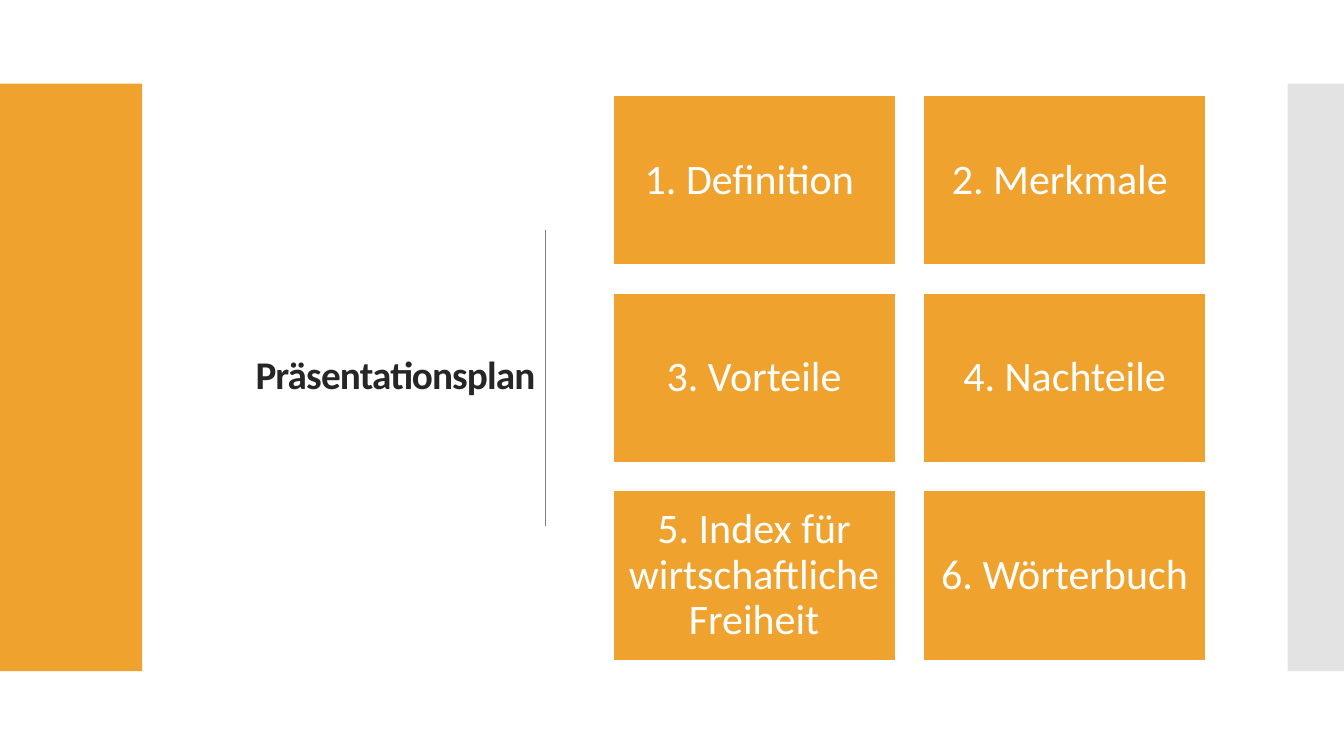
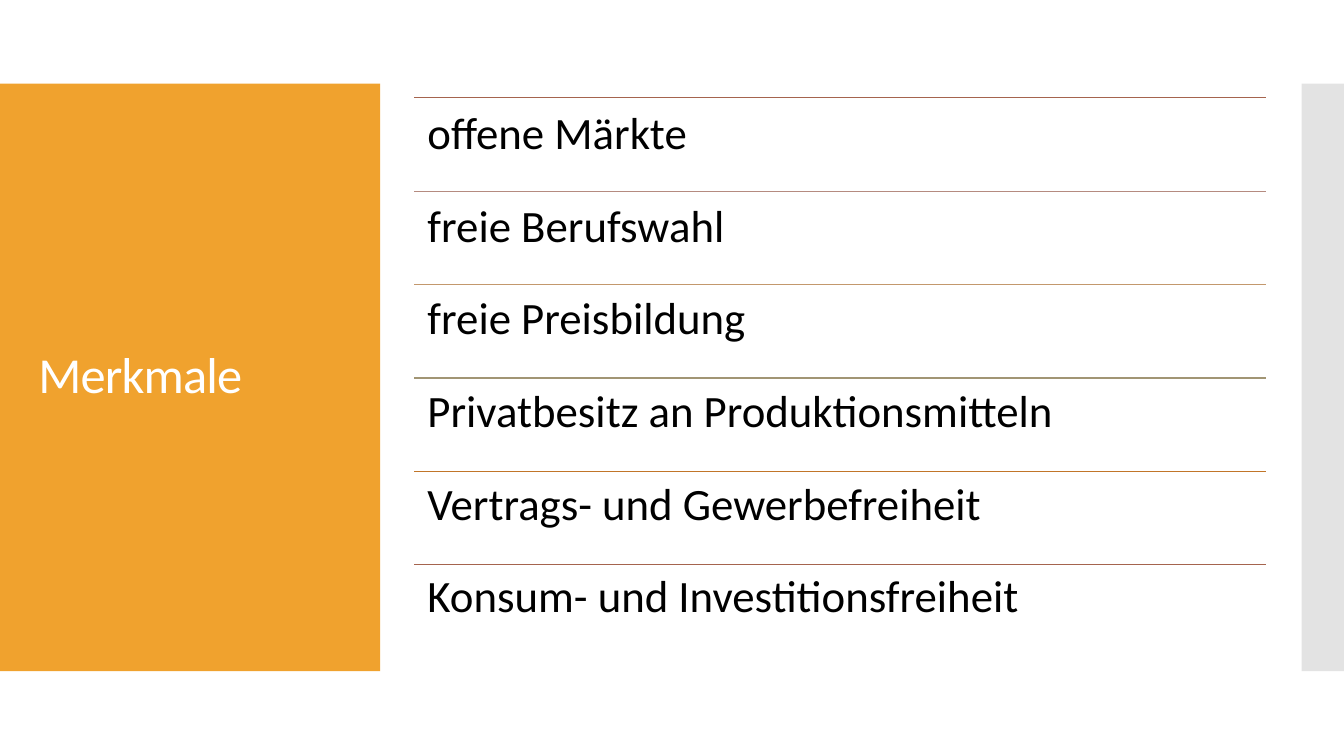
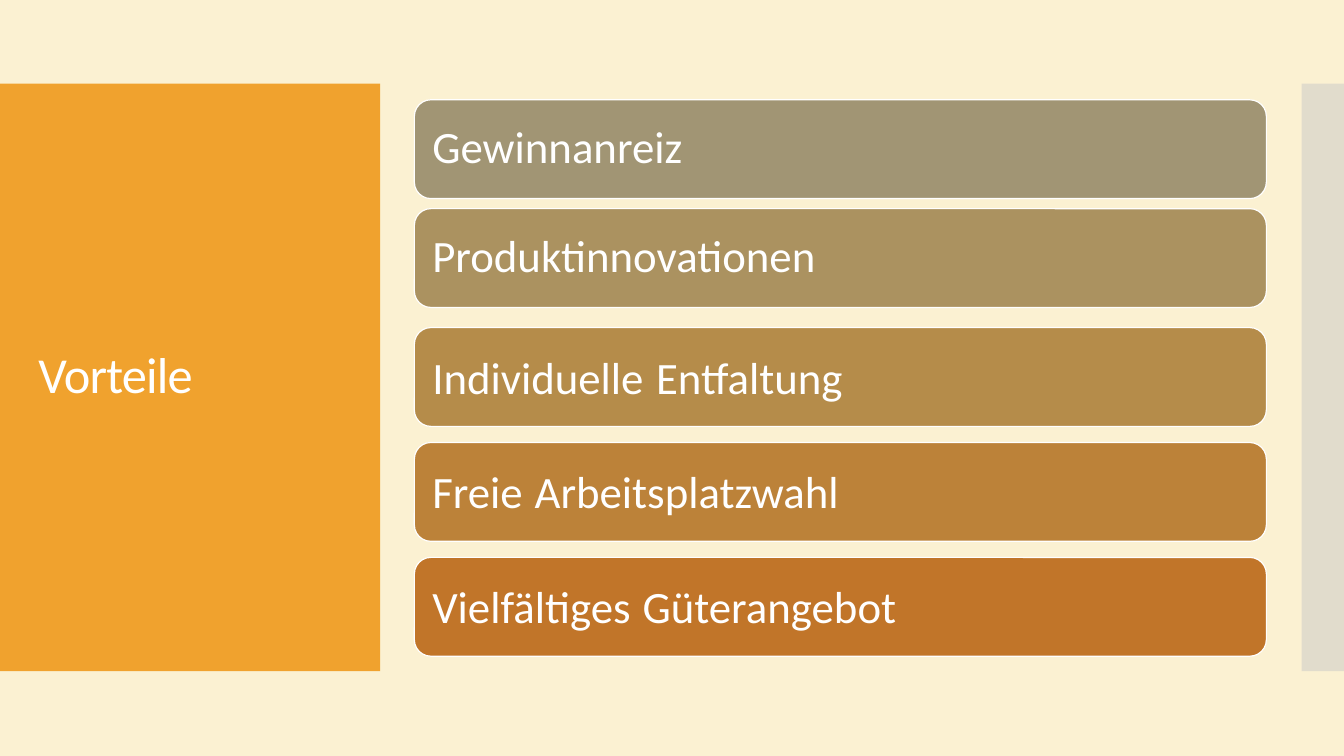
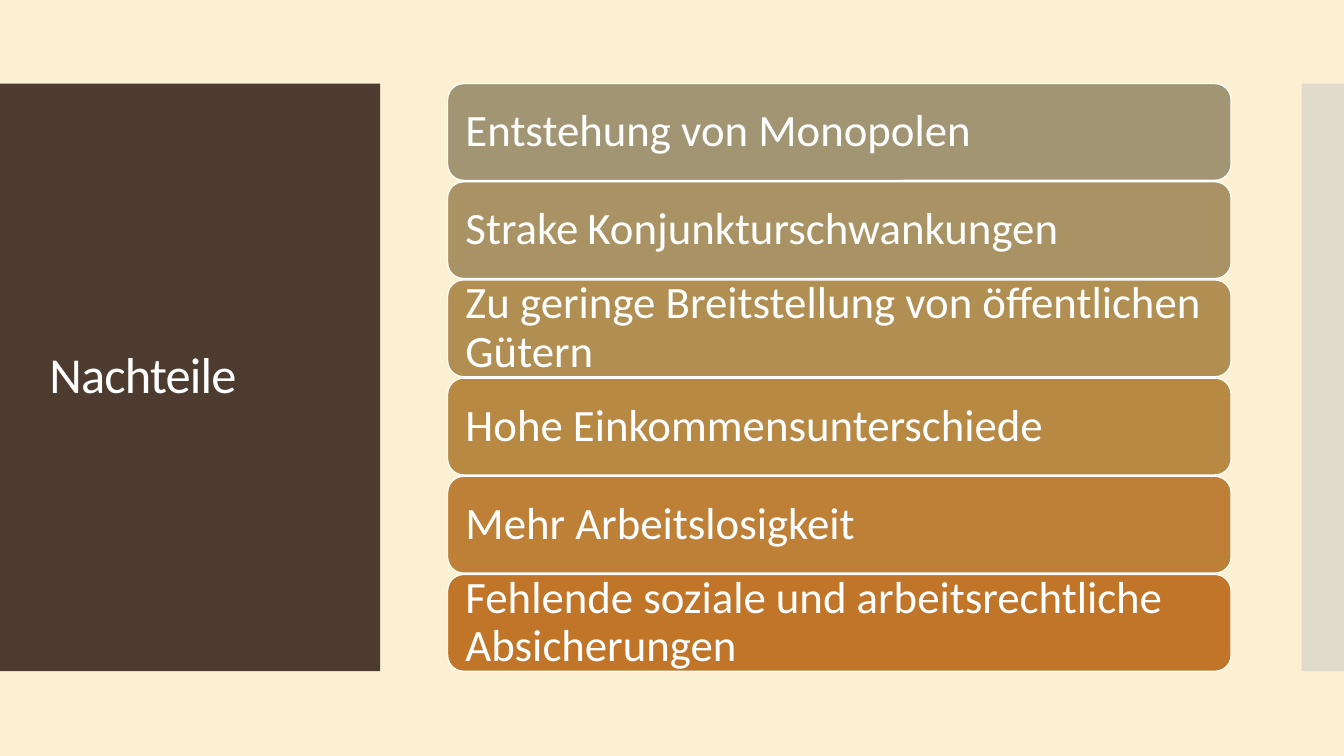
from dataclasses import dataclass

from lxml.etree import SubElement
from pptx import Presentation
from pptx.dml.color import RGBColor
from pptx.enum.shapes import MSO_CONNECTOR, MSO_SHAPE
from pptx.enum.text import MSO_ANCHOR, MSO_AUTO_SIZE, PP_ALIGN
from pptx.oxml.ns import qn
from pptx.util import Inches, Pt

COLORS = {
    "orange": "F0A22E", "brown": "4E3B30", "gray": "C8C8C8", "cream": "FBEEC9",
    "white": "FFFFFF", "black": "000000", "ink": "262626", "rule": "808080",
}
FONT = "Calibri"
LINE_SPACING = 0.9
BAND_TOP, BAND_HEIGHT = 0.83, 5.83
SLIDE_WIDTH, SLIDE_HEIGHT = 13.33, 7.5
TITLE_ONLY, TITLE_AND_BODY = 5, 1


@dataclass
class Box:
    left: float
    top: float
    width: float
    height: float

    def lengths(self) -> tuple:
        return tuple(Inches(n) for n in (self.left, self.top, self.width, self.height))


@dataclass
class TitleStyle:
    box: Box
    size: float = 36
    color: str = COLORS["white"]
    bold: bool = False
    align: PP_ALIGN = PP_ALIGN.LEFT
    indent: float = 0.1


@dataclass
class Bar:
    """A rounded bar; gap_size is the size of its first space, if it differs."""
    text: str
    color: str
    gap_size: float = 32


SIDE_TITLE = TitleStyle(Box(0.28, 1.23, 3.22, 5.03))


# Formatting helpers
def set_alpha(element, percent: float) -> None:
    color = next(element.iter(qn("a:srgbClr")))
    SubElement(color, qn("a:alpha")).set("val", str(int(percent * 1000)))


def format_span(span, size: float, color: str, bold: bool = False) -> None:
    span.font.name = FONT
    span.font.size = Pt(size)
    span.font.bold = bold
    span.font.color.rgb = RGBColor.from_string(color)


def format_frame(frame, anchor: MSO_ANCHOR, side: float, edge: float = 0) -> None:
    frame.word_wrap = True
    frame.auto_size = MSO_AUTO_SIZE.NONE
    frame.vertical_anchor = anchor
    frame.margin_left = frame.margin_right = Inches(side)
    frame.margin_top = frame.margin_bottom = Inches(edge)


def place(shape, box: Box) -> None:
    shape.left, shape.top, shape.width, shape.height = box.lengths()


# Parts
def add_block(page, box: Box, color: str, outlined: bool = False,
              kind: MSO_SHAPE = MSO_SHAPE.RECTANGLE):
    block = page.shapes.add_shape(kind, *box.lengths())
    block.shadow.inherit = False
    block.fill.solid()
    block.fill.fore_color.rgb = RGBColor.from_string(color)
    if outlined:
        block.line.color.rgb = RGBColor.from_string(COLORS["white"])
        block.line.width = Pt(0.85)
    else:
        block.line.fill.background()
    return block


def add_rule(page, start: tuple, end: tuple, color: str, width: float) -> None:
    rule = page.shapes.add_connector(
        MSO_CONNECTOR.STRAIGHT, *(Inches(n) for n in start + end))
    rule.line.color.rgb = RGBColor.from_string(color)
    rule.line.width = Pt(width)
    SubElement(rule.element.spPr, qn("a:effectLst"))


def add_title(page, text: str, style: TitleStyle) -> None:
    title = page.shapes.title
    place(title, style.box)
    title.element.getparent().append(title.element)  # in front of the bands
    frame = title.text_frame
    frame.text = text
    format_frame(frame, MSO_ANCHOR.MIDDLE, 0.1, 0.05)
    frame.margin_left = Inches(style.indent)
    para = frame.paragraphs[0]
    para.alignment = style.align
    para.line_spacing = LINE_SPACING
    format_span(para.runs[0], style.size, style.color, style.bold)
    next(title.element.iter(qn("a:rPr"))).set("spc", "-60")


def add_page(deck, title: str, style: TitleStyle = SIDE_TITLE, layout: int = TITLE_ONLY,
             band_color: str = COLORS["orange"], band_width: float = 3.77,
             edge_width: float = 0.42, cream: float = 0):
    """Start a page with its background, two side bands and title."""
    page = deck.slides.add_slide(deck.slide_layouts[layout])
    background = page.background.fill
    background.solid()
    background.fore_color.rgb = RGBColor.from_string(COLORS["cream" if cream else "white"])
    if cream:
        set_alpha(page.element, cream)
    add_block(page, Box(0, BAND_TOP, band_width, BAND_HEIGHT), band_color)
    edge = add_block(page, Box(SLIDE_WIDTH - edge_width, BAND_TOP, edge_width, BAND_HEIGHT),
                     COLORS["gray"])
    set_alpha(edge.element, 50)
    add_title(page, title, style)
    return page


def add_bar(page, box: Box, bar: Bar) -> None:
    shape = add_block(page, box, bar.color, True, MSO_SHAPE.ROUNDED_RECTANGLE)
    frame = shape.text_frame
    format_frame(frame, MSO_ANCHOR.MIDDLE, 0.13)
    para = frame.paragraphs[0]
    para.alignment = PP_ALIGN.LEFT
    para.line_spacing = LINE_SPACING
    pieces = [bar.text] if bar.gap_size == 32 else bar.text.partition(" ")
    for piece in pieces:
        span = para.add_run()
        span.text = piece
        format_span(span, bar.gap_size if piece == " " else 32, COLORS["white"])


# Pages
def add_plan_page(deck) -> None:
    style = TitleStyle(Box(1.68, 0.94, 3.73, 5.6), 28, COLORS["ink"], True, PP_ALIGN.RIGHT)
    page = add_page(deck, "Präsentationsplan", style, band_width=1.41, edge_width=0.56)
    add_rule(page, (5.41, 2.28), (5.41, 5.22), COLORS["rule"], 1)
    topics = ["1. Definition ", "2. Merkmale ", "3. Vorteile", "4. Nachteile",
              "5. Index für wirtschaftliche Freiheit", "6. Wörterbuch"]
    for index, topic in enumerate(topics):
        row, column = divmod(index, 2)
        card = add_block(page, Box(6.08 + 3.08 * column, 0.95 + 1.96 * row, 2.8, 1.68),
                         COLORS["orange"], True)
        frame = card.text_frame
        frame.text = topic
        format_frame(frame, MSO_ANCHOR.MIDDLE, 0.12, 0.12)
        para = frame.paragraphs[0]
        para.alignment = PP_ALIGN.CENTER
        para.line_spacing = LINE_SPACING
        format_span(para.runs[0], 30, COLORS["white"])


def add_features_page(deck) -> None:
    page = add_page(deck, "Merkmale", layout=TITLE_AND_BODY)
    features = {
        "offene Märkte": "A5644E",
        "freie Berufswahl": "B58B80",
        "freie Preisbildung": "C3986D",
        "Privatbesitz an Produktionsmitteln": "A19574",
        "Vertrags- und Gewerbefreiheit": "C17529",
        "Konsum- und Investitionsfreiheit": "A5644E",
    }
    area = Box(4.11, 0.97, 8.45, 5.56)
    pitch = area.height / len(features)
    line_height = 32 * 1.22 * LINE_SPACING

    # One list whose paragraph spacing matches the rules
    body = page.placeholders[1]
    place(body, area)
    frame = body.text_frame
    frame.text = "\n".join(features)
    format_frame(frame, MSO_ANCHOR.TOP, 0.13, 0.13)
    for index, (para, color) in enumerate(zip(frame.paragraphs, features.values())):
        para.line_spacing = LINE_SPACING
        para.space_before = Pt(0)
        para.space_after = Pt(pitch * 72 - line_height)
        format_span(para.runs[0], 32, COLORS["black"])
        top = area.top + pitch * index
        add_rule(page, (area.left, top), (area.left + area.width, top), color, 0.85)
    for properties in body.element.iter(qn("a:pPr")):
        properties.set("marL", "0")
        properties.set("indent", "0")
        SubElement(properties, qn("a:buNone"))


def add_advantages_page(deck) -> None:
    page = add_page(deck, "Vorteile", cream=82)
    bars = {
        0.99: Bar("Gewinnanreiz", "A19574"),
        2.07: Bar("Produktinnovationen", "AB9260"),
        3.25: Bar("Individuelle Entfaltung", "B58C4A", 38),
        4.39: Bar("Freie Arbeitsplatzwahl", "BC8239", 37),
        5.53: Bar("Vielfältiges Güterangebot", "C17529", 37),
    }
    for top, bar in bars.items():
        add_bar(page, Box(4.11, top, 8.45, 0.98), bar)


def add_drawbacks_page(deck) -> None:
    style = TitleStyle(SIDE_TITLE.box, indent=0.21)
    page = add_page(deck, "Nachteile", style, band_color=COLORS["brown"], cream=84)
    bars = [
        Bar("Entstehung von Monopolen", "A19574"),
        Bar("Strake Konjunkturschwankungen", "A99364", 28),
        Bar("Zu geringe Breitstellung von öffentlichen Gütern", "B18F53"),
        Bar("Hohe Einkommensunterschiede", "B88943"),
        Bar("Mehr Arbeitslosigkeit", "BD8036"),
        Bar("Fehlende soziale und arbeitsrechtliche Absicherungen", "C17529"),
    ]
    height = 0.96
    step = (BAND_HEIGHT - height) / (len(bars) - 1)
    for index, bar in enumerate(bars):
        add_bar(page, Box(4.44, BAND_TOP + step * index, 7.77, height), bar)


def main() -> None:
    deck = Presentation()
    deck.slide_width, deck.slide_height = Inches(SLIDE_WIDTH), Inches(SLIDE_HEIGHT)
    add_plan_page(deck)
    add_features_page(deck)
    add_advantages_page(deck)
    add_drawbacks_page(deck)
    deck.save("out.pptx")


if __name__ == "__main__":
    main()
